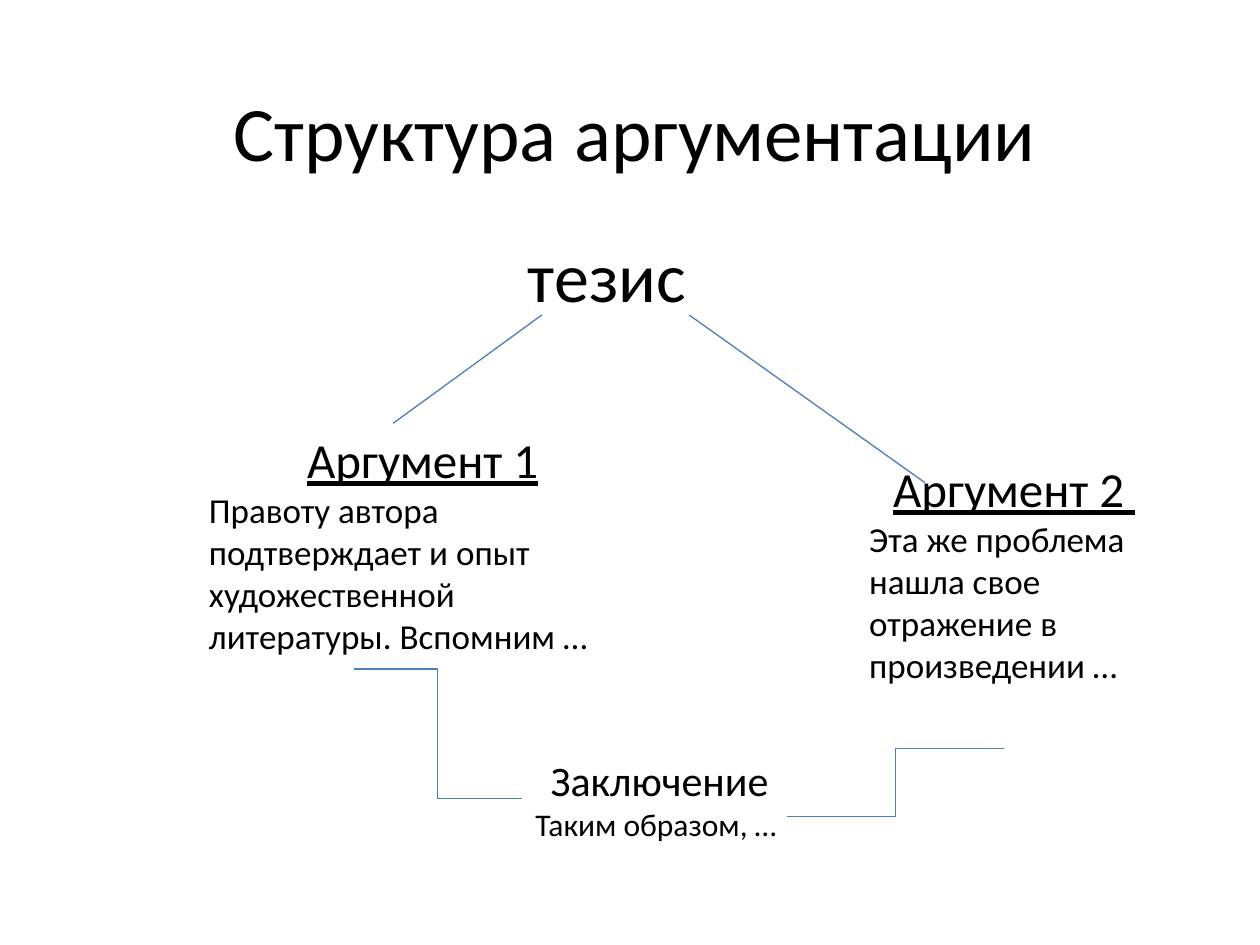
from dataclasses import dataclass

from pptx import Presentation
from pptx import util as u
from pptx.dml.color import RGBColor
from pptx.enum import shapes, text
from pptx.oxml.ns import qn
from lxml import etree

MID = text.PP_ALIGN.CENTER
LEFT = text.PP_ALIGN.LEFT


@dataclass(frozen=True)
class Theme:
    """Colours, font and type sizes of the slide."""
    font: str = "Calibri"
    ink: RGBColor = RGBColor(0, 0, 0)
    rule: RGBColor = RGBColor(0x4B, 0x7E, 0xBC)
    width: float = 0.75
    title: int = 44
    thesis: int = 40
    head: int = 28
    end: int = 24
    body: int = 20
    small: int = 18


LOOK = Theme()


def style(para, words, size, align=MID, under=False):
    """Write one paragraph and set its font."""
    para.text = words
    para.alignment = align
    font = para.font
    font.name, font.size, font.underline = LOOK.font, u.Pt(size), under
    font.color.rgb = LOOK.ink


def add_title(slide, box, words):
    """Move and fill the title placeholder."""
    title = slide.shapes.title
    title.left, title.top, title.width, title.height = map(u.Inches, box)
    title.text_frame.vertical_anchor = text.MSO_ANCHOR.MIDDLE
    style(title.text_frame.paragraphs[0], words, LOOK.title)


def add_text(slide, box, *lines):
    """Place a wrapped text box with one paragraph per line."""
    frame = slide.shapes.add_textbox(*map(u.Inches, box)).text_frame
    frame.word_wrap = True
    for i, line in enumerate(lines):
        para = frame.add_paragraph() if i else frame.paragraphs[0]
        style(para, *line)
    return frame


def add_thesis(slide, box, words):
    """Place the thesis with a small closing space."""
    frame = add_text(slide, box, (words, LOOK.thesis))
    gap = frame.paragraphs[0].add_run()
    gap.text = " "
    gap.font.size = u.Pt(LOOK.small)


def add_point(slide, box, head, body):
    """Place an argument: underlined heading and its text."""
    add_text(slide, box, (head, LOOK.head, MID, True), (body, LOOK.body, LEFT))


def add_end(slide, box, head, body):
    """Place the conclusion."""
    add_text(slide, box, (head, LOOK.end), (body, LOOK.small))


def add_link(slide, kind, *ends):
    """Draw a thin connector between two points."""
    link = slide.shapes.add_connector(kind, *map(u.Inches, ends))
    link.line.color.rgb = LOOK.rule
    link.line.width = u.Pt(LOOK.width)
    etree.SubElement(link._element.spPr, qn("a:effectLst"))


def main():
    """Build and save the slide."""
    deck = Presentation()
    deck.slide_width, deck.slide_height = u.Inches(10), u.Inches(7.5)
    slide = deck.slides.add_slide(deck.slide_layouts[0])
    sub = slide.placeholders[1].element
    sub.getparent().remove(sub)

    add_title(slide, (0.86, 0.23, 8.5, 1.61), "Структура аргументации ")
    add_thesis(slide, (3.44, 1.8, 2.81, 0.77), "тезис")
    add_point(slide, (1.56, 3.36, 3.59, 1.92), "Аргумент 1",
              "Правоту автора подтверждает и опыт художественной "
              "литературы. Вспомним …")
    add_point(slide, (6.8, 3.59, 2.5, 1.92), "Аргумент 2 ",
              "Эта же проблема нашла свое отражение в произведении …")
    add_end(slide, (4.14, 5.94, 2.19, 0.81), "Заключение", "Таким образом, … ")

    kind = shapes.MSO_CONNECTOR
    add_link(slide, kind.STRAIGHT, 4.3, 2.5, 3.12, 3.36)
    add_link(slide, kind.STRAIGHT, 5.47, 2.5, 7.34, 3.83)
    add_link(slide, kind.ELBOW, 2.81, 5.31, 4.14, 6.34)
    add_link(slide, kind.ELBOW, 7.97, 5.94, 6.25, 6.48)
    deck.save("out.pptx")


if __name__ == "__main__":
    main()
